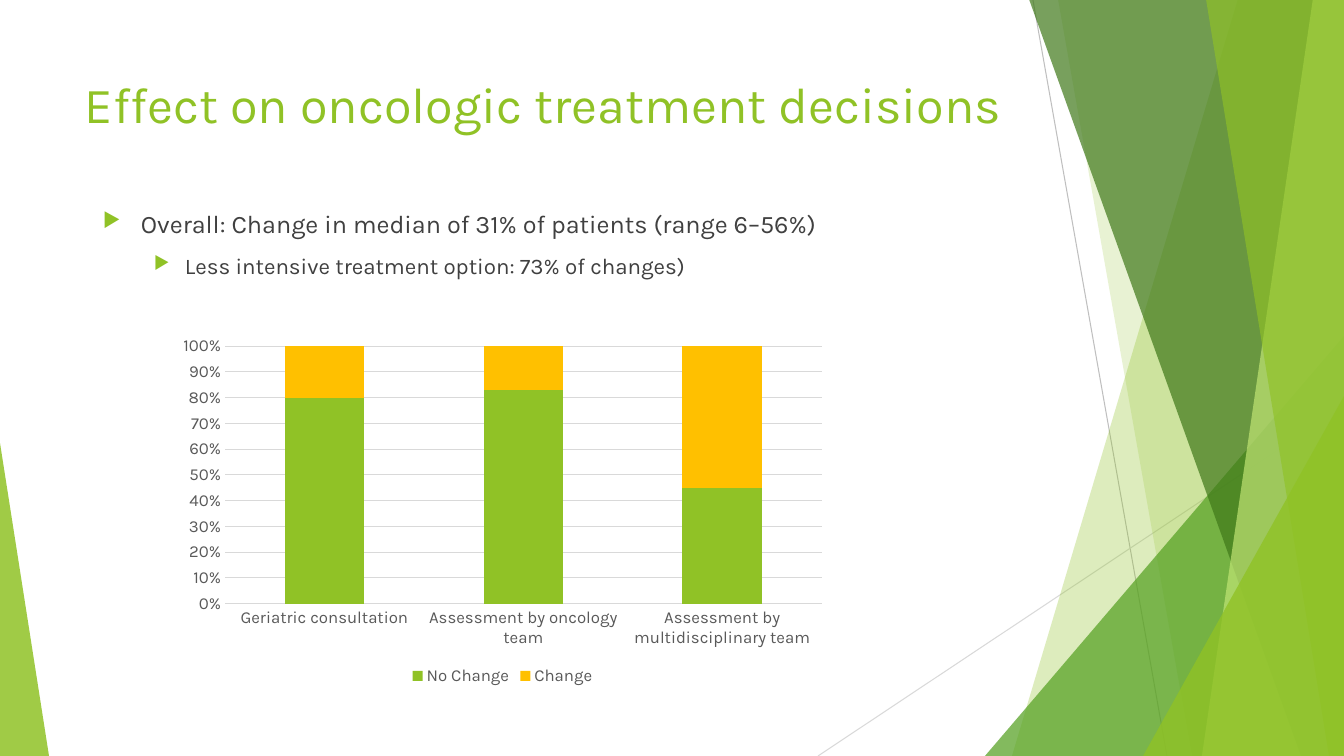
from dataclasses import dataclass

from lxml import etree
from pptx import Presentation
from pptx.chart.data import CategoryChartData
from pptx.dml.color import RGBColor
from pptx.enum.chart import XL_CHART_TYPE, XL_LEGEND_POSITION, XL_TICK_MARK
from pptx.enum.shapes import MSO_CONNECTOR, MSO_SHAPE
from pptx.enum.text import MSO_ANCHOR
from pptx.oxml.ns import qn
from pptx.util import Emu, Pt

STACKED = XL_CHART_TYPE.COLUMN_STACKED_100
BOTTOM = XL_LEGEND_POSITION.BOTTOM
NO_TICK = XL_TICK_MARK.NONE
STRAIGHT = MSO_CONNECTOR.STRAIGHT
TRIANGLE = MSO_SHAPE.ISOSCELES_TRIANGLE
TOP = MSO_ANCHOR.TOP
EMU_PER_PX = 914400 / 100.8
WIDTH, HEIGHT = 1344, 756


@dataclass(frozen=True)
class Theme:
    font: str = "Karla"
    lime: str = "90C226"
    pale_lime: str = "C0E474"
    green: str = "54A021"
    forest: str = "3F7819"
    amber: str = "FFC000"
    text: str = "404040"
    label: str = "595959"
    grid: str = "D9D9D9"
    rule: str = "BFBFBF"
    hairline: float = 0.75
    title_size: int = 36
    body_size: int = 18
    detail_size: int = 16
    label_size: int = 12


def px(length):
    return Emu(round(length * EMU_PER_PX))


def rgb(color):
    return RGBColor.from_string(color)


class SlideBuilder:
    """Draws themed elements on the current slide, in pixels."""

    def __init__(self, page, theme):
        self.page = page
        self.theme = theme

    def style_font(self, font, size, color):
        font.name = self.theme.font
        font.size = Pt(size)
        font.color.rgb = rgb(color)

    def style_line(self, line, color):
        line.color.rgb = rgb(color)
        line.width = Pt(self.theme.hairline)

    def rule(self, start, end, color):
        line = self.page.shapes.add_connector(
            STRAIGHT, *map(px, start), *map(px, end))
        self.style_line(line.line, color)
        etree.SubElement(line._element.spPr, qn("a:effectLst"))

    def tint(self, shape, color, opacity):
        shape.shadow.inherit = False
        shape.fill.solid()
        shape.fill.fore_color.rgb = rgb(color)
        shape.line.fill.background()
        color_node = shape._element.spPr.find(
            f"{qn('a:solidFill')}/{qn('a:srgbClr')}")
        etree.SubElement(color_node, qn("a:alpha"), val=str(opacity * 1000))

    def band(self, top_left, bottom_left, color, opacity):
        outline = self.page.shapes.build_freeform(top_left, -1, scale=EMU_PER_PX)
        outline.add_line_segments(
            [(WIDTH, -1), (WIDTH, HEIGHT), (bottom_left, HEIGHT)], close=True)
        self.tint(outline.convert_to_shape(), color, opacity)

    def corner(self, left, top, width, apex, color, opacity):
        shape = self.page.shapes.add_shape(
            TRIANGLE, px(left), px(top), px(width), px(HEIGHT - top))
        shape.adjustments[0] = apex
        self.tint(shape, color, opacity)

    def text_box(self, left, top, width, height):
        frame = self.page.shapes.add_textbox(
            px(left), px(top), px(width), px(height)).text_frame
        frame.word_wrap = True
        frame.vertical_anchor = TOP
        return frame

    def add_span(self, para, text, size, color):
        span = para.add_run()
        span.text = text
        self.style_font(span.font, size, color)

    def bullet(self, para, margin, hang):
        props = para._p.get_or_add_pPr()
        props.set("marL", str(px(margin)))
        props.set("indent", str(-px(hang)))
        tone = etree.SubElement(props, qn("a:buClr"))
        etree.SubElement(tone, qn("a:srgbClr"), val=self.theme.lime)
        etree.SubElement(props, qn("a:buSzPct"), val="80000")
        etree.SubElement(props, qn("a:buChar"), char="▶")

    def title(self, text, *area):
        para = self.text_box(*area).paragraphs[0]
        self.add_span(para, text, self.theme.title_size, self.theme.lime)

    def bullets(self, items, *area):
        frame = self.text_box(*area)
        for index, (text, level, margin, hang, size) in enumerate(items):
            para = frame.add_paragraph() if index else frame.paragraphs[0]
            para.level = level
            self.bullet(para, margin, hang)
            if index:
                para.space_before = Pt(10)
            self.add_span(para, text, size, self.theme.text)

    def stacked_chart(self, categories, series, *area):
        theme = self.theme
        data = CategoryChartData()
        data.categories = categories
        for name, values, _ in series:
            data.add_series(name, values)
        chart = self.page.shapes.add_chart(STACKED, *map(px, area), data).chart
        chart.has_title = False
        self.style_font(chart.font, theme.label_size, theme.label)

        chart.has_legend = True
        chart.legend.position = BOTTOM
        chart.legend.include_in_layout = False
        self.style_font(chart.legend.font, theme.label_size, theme.label)

        plot = chart.plots[0]
        plot.gap_width = 150
        plot.overlap = 100
        plot.vary_by_categories = False
        for bars, (_, _, color) in zip(plot.series, series):
            bars.format.fill.solid()
            bars.format.fill.fore_color.rgb = rgb(color)

        for axis in (chart.category_axis, chart.value_axis):
            axis.major_tick_mark = axis.minor_tick_mark = NO_TICK
            self.style_font(axis.tick_labels.font, theme.label_size, theme.label)
        self.style_line(chart.category_axis.format.line, theme.grid)
        scale = chart.value_axis
        scale.format.line.fill.background()
        scale.has_major_gridlines = True
        self.style_line(scale.major_gridlines.format.line, theme.grid)
        scale.tick_labels.number_format = "0%"
        scale.tick_labels.number_format_is_linked = False


def main():
    theme = Theme()
    deck = Presentation()
    deck.slide_width, deck.slide_height = px(WIDTH), px(HEIGHT)
    slide = SlideBuilder(deck.slides.add_slide(deck.slide_layouts[6]), theme)

    slide.rule((1033, 0), (1167, HEIGHT), theme.rule)
    slide.rule((WIDTH, 406), (818, HEIGHT), theme.grid)
    slide.band(1238, 1012, theme.lime, 30)
    slide.band(1058, 1192, theme.lime, 20)
    slide.corner(985, 336, 359, 1, theme.green, 72)
    slide.band(1029, 1301, theme.forest, 70)
    slide.band(1313, 1202, theme.pale_lime, 70)
    slide.band(1206, 1329, theme.lime, 65)
    slide.corner(1143, 396, 201, 1, theme.lime, 80)
    slide.corner(0, 443, 49, 0, theme.lime, 85)

    slide.title("Effect on oncologic treatment decisions", 75, 68, 948, 145)
    slide.bullets([
        ("Overall: Change in median of 31% of patients (range 6–56%)",
         0, 38, 38, theme.body_size),
        ("Less intensive treatment option: 73% of changes)",
         1, 82, 31, theme.detail_size),
    ], 93, 203, 1159, 480)
    slide.stacked_chart(
        ["Geriatric consultation", "Assessment by oncology team",
         "Assessment by multidisciplinary team"],
        [("No Change", (80, 83, 45), theme.lime),
         ("Change", (20, 17, 55), theme.amber)],
        170, 329, 665, 361)

    deck.save("out.pptx")


if __name__ == "__main__":
    main()
